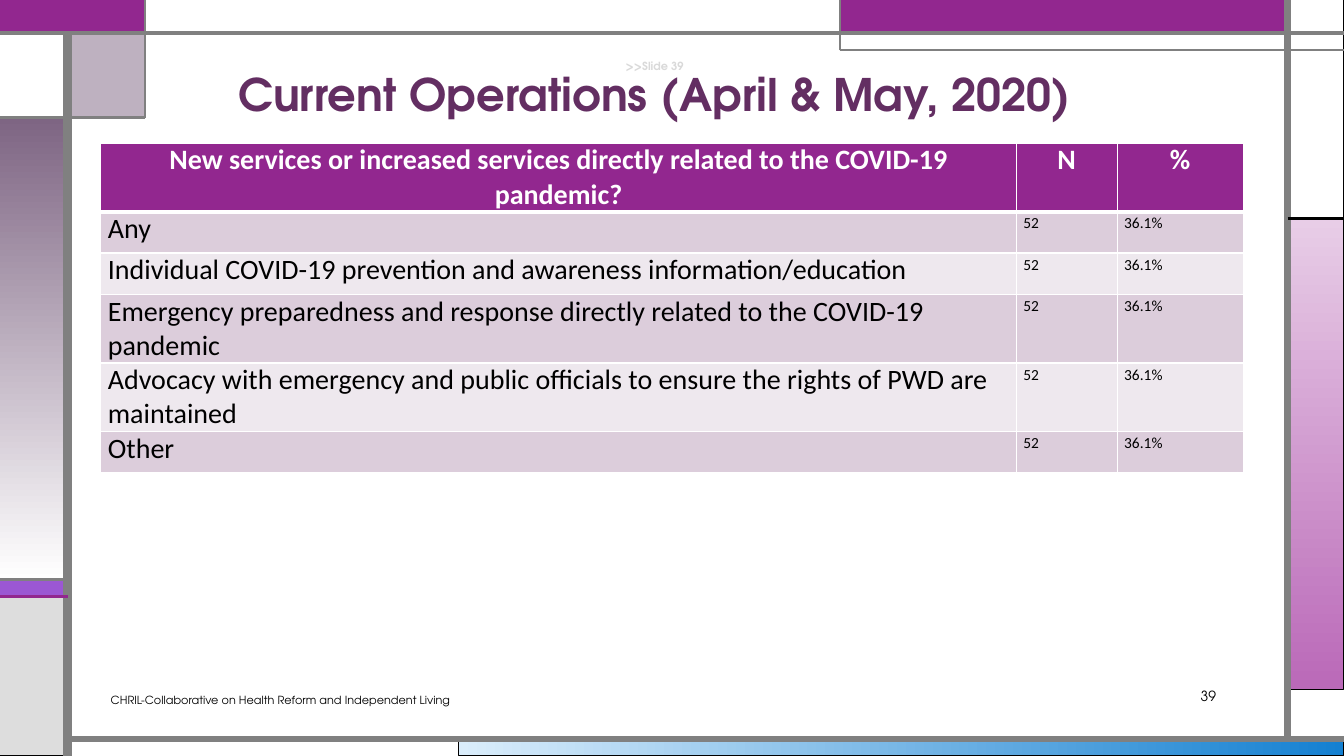
from lxml import etree
from pptx import Presentation
from pptx.dml.color import RGBColor
from pptx.enum.shapes import MSO_CONNECTOR, MSO_SHAPE
from pptx.enum.text import MSO_ANCHOR, PP_ALIGN
from pptx.oxml.ns import qn
from pptx.util import Inches, Pt

W, H = 13.33, 7.5
COLORS = {
    "white": "FFFFFF", "black": "000000", "gray": "808080", "silver": "DDDDDD",
    "plum": "92278F", "violet": "9B57D3", "indigo": "755DD9", "mauve": "7E6583",
    "pink": "E8CDE7", "orchid": "BA69B8", "ice": "DAEDFB", "blue": "1480D1",
    "title": "632E62", "faint": "D9D9D9", "band": "DCCDDB", "band light": "EEE8EE",
}
HEADING_FONT, TABLE_FONT = "TeX Gyre Adventor", "Calibri"

TITLE_TAG = ">>Slide 39"
TITLE = "Current Operations (April & May, 2020)"
FOOTER = "CHRIL-Collaborative on Health Reform and Independent Living"
PAGE = "39"
HEADER = ("New services or increased services directly related to the COVID-19 pandemic?", "N", "%")
ROWS = [
    ("Any", "52", "36.1%"),
    ("Individual COVID-19 prevention and awareness information/education", "52", "36.1%"),
    ("Emergency preparedness and response directly related to the COVID-19 pandemic", "52", "36.1%"),
    ("Advocacy with emergency and public officials to ensure the rights of PWD are maintained",
     "52", "36.1%"),
    ("Other", "52", "36.1%"),
]
COL_WIDTHS = (9.08, 1, 1.25)
ROW_HEIGHT = 0.41

# Grid lines of the frame, indexed by PANELS and RULES
X = (0, 0.67, 1.44, 4.55, 8.33, 12.77, W)
Y = (0, 0.33, 0.5, 1.17, 2.17, 5.75, 5.92, 6.84, 7.33, H)
# left, top, right, bottom, fill (two colours and an angle for a gradient), line, line width
PANELS = [
    (3, 8, 6, 9, ("ice", "blue", 0), "black", 0.75),
    (5, 4, 6, 7, ("pink", "orchid", 270), "black", 0.75),
    (0, 5, 1, 6, "violet", "black", 0.75),
    (0, 6, 1, 9, "silver", "black", 0.75),
    (5, 0, 6, 4, "white", "black", 0.75),
    (4, 0, 5, 1, "plum", "indigo", 0.75),
    (1, 1, 2, 3, "mauve", "black", 0.75),
    (0, 3, 1, 5, ("mauve", "white", 270), "black", 0.75),
    (0, 1, 1, 3, "white", "black", 0.75),
    (0, 0, 2, 1, "plum", "plum", 1.5),
    (2, 0, 4, 1, "white", "gray", 0.75),
]
TRANSLUCENT = {(1, 1): 50}  # opacity in percent, by left and top grid line
# from x, from y, to x, to y, colour, width
RULES = [
    (1, 9, 1, 1, "gray", 6), (1, 8, 6, 8, "gray", 4.5), (5, 8, 5, 0, "gray", 4.5),
    (0, 1, 6, 1, "gray", 3), (6, 2, 4, 2, "gray", 1.5), (4, 2, 4, 0, "gray", 1.5),
    (5, 4, 6, 4, "black", 2.25), (2, 0, 2, 3, "gray", 1.5), (2, 3, 0, 3, "gray", 2.25),
    (1, 5, 0, 5, "gray", 2.25), (1, 6, 0, 6, "plum", 2.25),
]


def rgb(name):
    return RGBColor.from_string(COLORS[name])


def add_panel(shapes, left, top, right, bottom, fill, line, width):
    s = shapes.add_shape(MSO_SHAPE.RECTANGLE, Inches(X[left]), Inches(Y[top]),
                         Inches(X[right] - X[left]), Inches(Y[bottom] - Y[top]))
    s.shadow.inherit = False
    if isinstance(fill, tuple):
        s.fill.gradient()
        s.fill.gradient_angle = fill[2]
        for stop, name in zip(s.fill.gradient_stops, fill):
            stop.color.rgb = rgb(name)
    else:
        s.fill.solid()
        s.fill.fore_color.rgb = rgb(fill)
    if (left, top) in TRANSLUCENT:
        color = s._element.spPr.find(qn("a:solidFill"))[0]
        etree.SubElement(color, qn("a:alpha"), val=str(TRANSLUCENT[left, top] * 1000))
    s.line.color.rgb = rgb(line)
    s.line.width = Pt(width)


def add_rule(shapes, x1, y1, x2, y2, color, width):
    c = shapes.add_connector(MSO_CONNECTOR.STRAIGHT, Inches(X[x1]), Inches(Y[y1]),
                             Inches(X[x2]), Inches(Y[y2]))
    c.line.color.rgb = rgb(color)
    c.line.width = Pt(width)
    etree.SubElement(c._element.spPr, qn("a:effectLst"))


def set_font(font, name, size, color, bold=False):
    font.name, font.size, font.bold = name, Pt(size), bold
    font.color.rgb = rgb(color)


def add_text(shapes, box, text, size, color="black", align=PP_ALIGN.LEFT,
             anchor=MSO_ANCHOR.MIDDLE, bold=False):
    tf = shapes.add_textbox(*map(Inches, box)).text_frame
    tf.word_wrap = True
    tf.vertical_anchor = anchor
    p = tf.paragraphs[0]
    p.alignment = align
    set_font(p.font, HEADING_FONT, size, color, bold)
    p.add_run().text = text
    return p


def set_borders(cell, widths):
    """Draw white borders; widths are points for left, right, top and bottom."""
    tc_pr = cell._tc.get_or_add_tcPr()
    for i, (side, width) in enumerate(zip("LRTB", widths)):
        ln = etree.Element(qn("a:ln" + side), w=str(Pt(width)))
        fill = etree.SubElement(ln, qn("a:solidFill"))
        etree.SubElement(fill, qn("a:srgbClr"), val=COLORS["white"])
        tc_pr.insert(i, ln)


def fill_cell(cell, text, row, col):
    is_header, is_value = row == 0, row > 0 and col > 0
    cell.margin_left = cell.margin_right = Inches(0.07)
    cell.margin_top = Inches(0.01 if is_value else 0)
    cell.margin_bottom = 0
    cell.fill.solid()
    cell.fill.fore_color.rgb = rgb("plum" if is_header else "band" if row % 2 else "band light")
    set_borders(cell, (1, 1, 3 if row == 1 else 1, 3 if is_header else 1))
    p = cell.text_frame.paragraphs[0]
    p.alignment = PP_ALIGN.CENTER if is_header else PP_ALIGN.LEFT
    if is_value:
        p.line_spacing = 1.07
        p.space_after = Pt(8)
    set_font(p.font, TABLE_FONT, 11 if is_value else 20,
             "white" if is_header else "black", is_header)
    p.add_run().text = text


def add_services_table(shapes):
    rows = [HEADER, *ROWS]
    table = shapes.add_table(len(rows), len(COL_WIDTHS), Inches(1), Inches(1.42),
                             Inches(sum(COL_WIDTHS)), Inches(ROW_HEIGHT * len(rows))).table
    for column, width in zip(table.columns, COL_WIDTHS):
        column.width = Inches(width)
    for i, texts in enumerate(rows):
        table.rows[i].height = Inches(ROW_HEIGHT)
        for j, text in enumerate(texts):
            fill_cell(table.cell(i, j), text, i, j)


def main():
    prs = Presentation()
    prs.slide_width, prs.slide_height = Inches(W), Inches(H)
    shapes = prs.slides.add_slide(prs.slide_layouts[6]).shapes
    for panel in PANELS:
        add_panel(shapes, *panel)
    for rule in RULES:
        add_rule(shapes, *rule)
    add_services_table(shapes)

    p = add_text(shapes, (1.41, 0.5, 10.17, 0.75), TITLE_TAG, 8, "faint",
                 PP_ALIGN.CENTER, MSO_ANCHOR.BOTTOM, bold=True)
    p.line_spacing = 0.9
    p.add_line_break()
    r = p.add_run()
    r.text = TITLE
    set_font(r.font, HEADING_FONT, 32, "title", True)

    add_text(shapes, (11.08, 6.75, 1.08, 0.3), PAGE, 10, align=PP_ALIGN.RIGHT)
    add_text(shapes, (1, 6.75, 3.83, 0.38), FOOTER, 8)
    prs.save("out.pptx")


if __name__ == "__main__":
    main()
